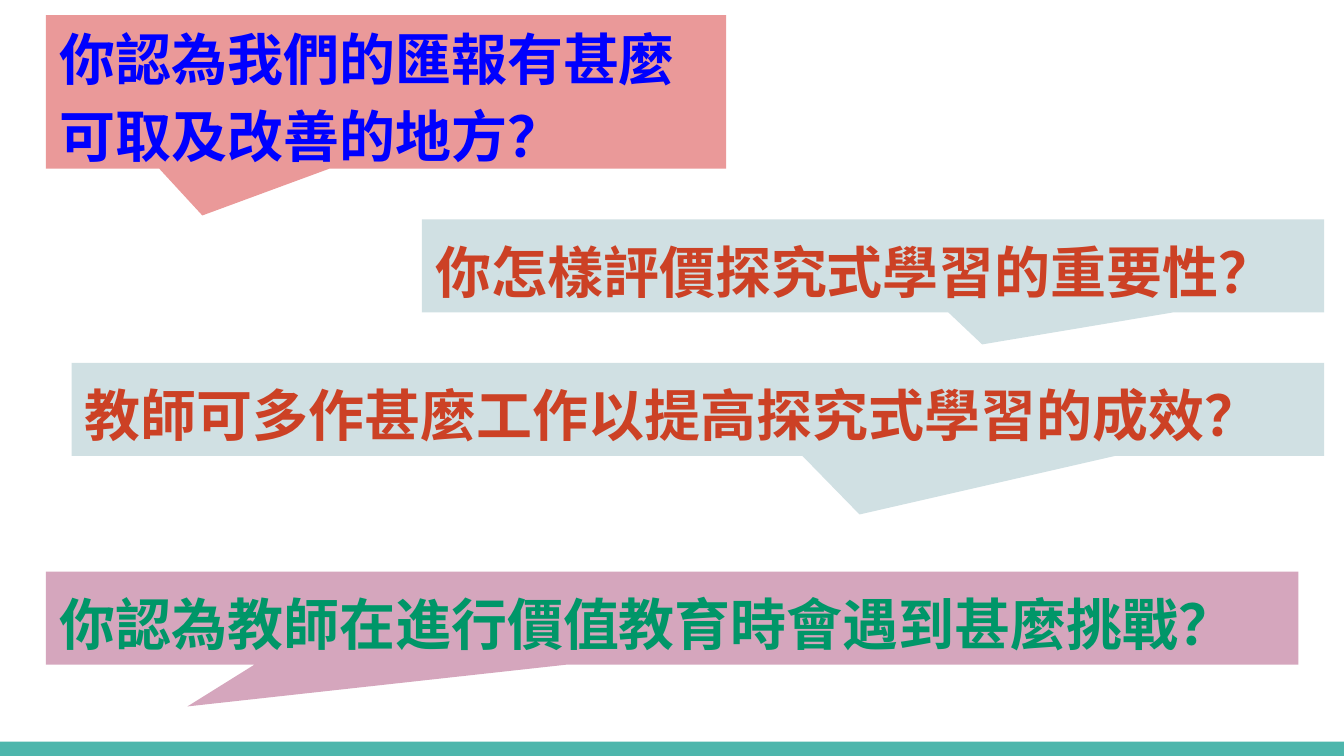
import pptx
import pptx.util
import pptx.dml.color
import pptx.enum.shapes
import pptx.enum.text
from lxml import etree

Pt = pptx.util.Pt
RGB = pptx.dml.color.RGBColor.from_string
SHAPES = pptx.enum.shapes.MSO_SHAPE

THEME = {
    "font": "Open Sans",
    "size": 30,
    "bar": "4DB6AC",
    # fill and text colour of each kind of question
    "report": ("EA9999", "0000FF"),
    "inquiry": ("D0E0E3", "CC4125"),
    "values": ("D5A6BD", "009668"),
}
SLIDE_WIDTH, SLIDE_HEIGHT = 720, 405
BAR_HEIGHT = 7.6
ONE_LINE, TWO_LINES = 49.8, 82.2
INSET = 7.2

# question, kind, (left, top, width, height), pointer tip
QUESTIONS = [
    ("你認為我們的匯報有甚麼可取及改善的地方？", "report",
     (24.6, 8.2, 364.4, TWO_LINES), (-0.27, 0.805)),
    ("教師可多作甚麼工作以提高探究式學習的成效？", "inquiry",
     (38.4, 194.4, 671, ONE_LINE), (0.129, 1.131)),
    ("你怎樣評價探究式學習的重要性？", "inquiry",
     (226, 117.5, 483.4, ONE_LINE), (0.121, 0.846)),
    ("你認為教師在進行價值教育時會遇到甚麼挑戰？", "values",
     (24.6, 306.2, 671, ONE_LINE), (-0.387, 0.951)),
]


def set_all(target, values):
    for name, value in values.items():
        setattr(target, name, value)


def add_filled(slide, preset, bounds, color):
    shape = slide.shapes.add_shape(preset, *map(Pt, bounds))
    shape.shadow.inherit = False
    shape.fill.solid()
    shape.fill.fore_color.rgb = RGB(color)
    shape.line.fill.background()
    return shape


def add_question(slide, question, kind, bounds, tip):
    fill, ink = THEME[kind]
    callout = add_filled(slide, SHAPES.ROUNDED_RECTANGULAR_CALLOUT, bounds, fill)
    for index, value in enumerate((*tip, 0)):
        callout.adjustments[index] = value

    frame = callout.text_frame
    set_all(frame, {f"margin_{side}": Pt(INSET)
                    for side in ("left", "top", "right", "bottom")})
    set_all(frame, {"word_wrap": True,
                    "vertical_anchor": pptx.enum.text.MSO_ANCHOR.MIDDLE})
    paragraph = frame.paragraphs[0]
    set_all(paragraph, {"alignment": pptx.enum.text.PP_ALIGN.LEFT,
                        "line_spacing": 1.15, "space_after": Pt(16)})
    run = paragraph.add_run()
    run.text = question
    set_all(run.font, {"name": THEME["font"], "size": Pt(THEME["size"]), "bold": True})
    run.font.color.rgb = RGB(ink)
    # Chinese characters take their typeface from a:ea, which follows a:latin
    latin = run.font._element.find(pptx.oxml.ns.qn("a:latin"))
    east_asian = etree.Element(pptx.oxml.ns.qn("a:ea"), typeface=THEME["font"])
    latin.addnext(east_asian)


def main():
    deck = pptx.Presentation()
    set_all(deck, {"slide_width": Pt(SLIDE_WIDTH), "slide_height": Pt(SLIDE_HEIGHT)})
    slide = deck.slides.add_slide(deck.slide_layouts[6])
    add_filled(slide, SHAPES.RECTANGLE,
               (0, SLIDE_HEIGHT - BAR_HEIGHT, SLIDE_WIDTH, BAR_HEIGHT), THEME["bar"])
    for question in QUESTIONS:
        add_question(slide, *question)
    deck.save("out.pptx")


if __name__ == "__main__":
    main()
